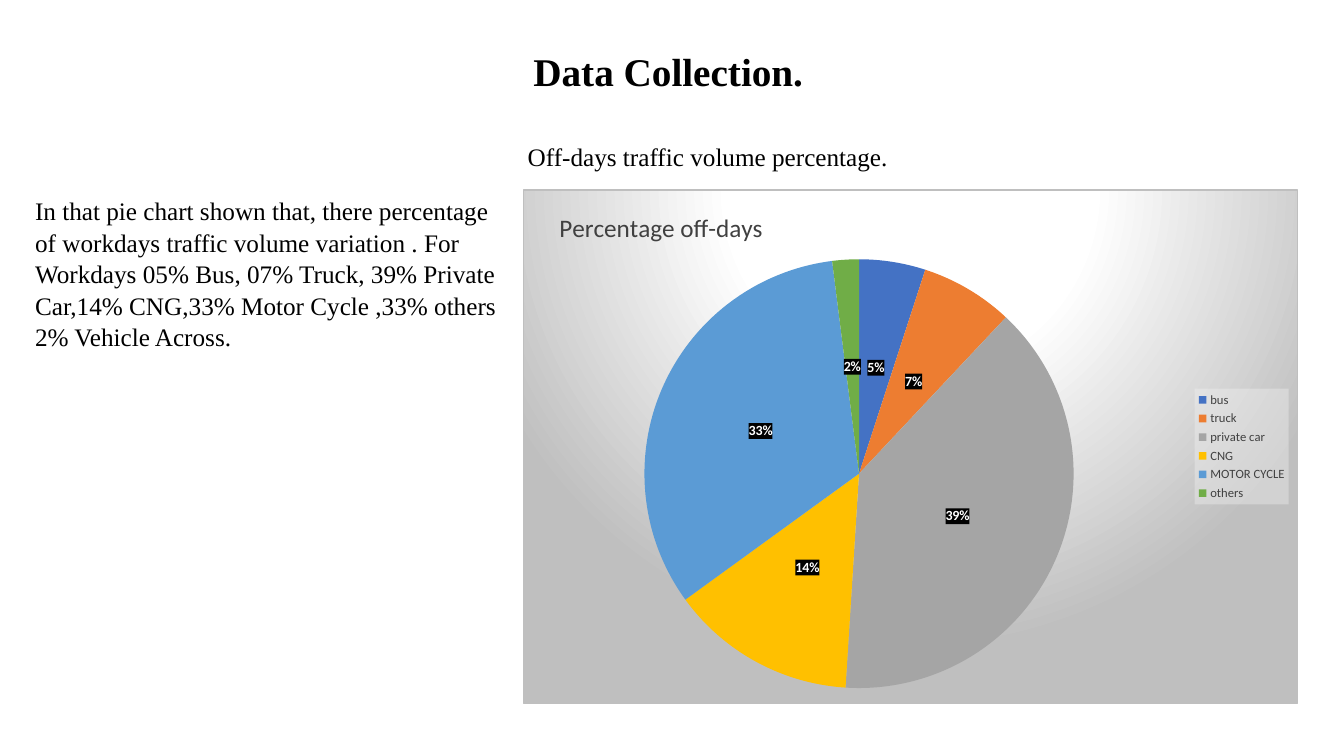
from lxml import etree
from pptx import Presentation
from pptx.chart.data import CategoryChartData
from pptx.dml.color import RGBColor
from pptx.enum.chart import XL_CHART_TYPE, XL_LABEL_POSITION, XL_LEGEND_POSITION
from pptx.enum.text import MSO_ANCHOR, MSO_AUTO_SIZE, PP_ALIGN
from pptx.oxml import parse_xml
from pptx.oxml.ns import nsdecls, qn
from pptx.util import Inches, Pt

HEADING = "Data Collection."
SUBHEADING = "Off-days traffic volume percentage."
DESCRIPTION = (
    "In that pie chart shown that, there percentage of workdays traffic volume variation . "
    "For Workdays 05% Bus, 07% Truck, 39% Private Car,14% CNG,33% Motor Cycle ,33% others "
    "2% Vehicle Across."
)
CHART_TITLE = "Percentage off-days"

BLACK = RGBColor(0x00, 0x00, 0x00)
WHITE = RGBColor(0xFF, 0xFF, 0xFF)
DARK_GRAY = RGBColor(0x40, 0x40, 0x40)
LIGHT_GRAY = RGBColor(0xF2, 0xF2, 0xF2)
SILVER = RGBColor(0xBF, 0xBF, 0xBF)

VEHICLES = [
    ("bus", 5, RGBColor(0x44, 0x72, 0xC4)),
    ("truck", 7, RGBColor(0xED, 0x7D, 0x31)),
    ("private car", 39, RGBColor(0xA5, 0xA5, 0xA5)),
    ("CNG", 14, RGBColor(0xFF, 0xC0, 0x00)),
    ("MOTOR CYCLE", 33, RGBColor(0x5B, 0x9B, 0xD5)),
    ("others", 2, RGBColor(0x70, 0xAD, 0x47)),
]
GRADIENT_STOPS = [(0, WHITE), (39, WHITE), (100, SILVER)]


def style_font(font, name, size, color, bold=False):
    font.name, font.size, font.bold = name, Pt(size), bold
    font.color.rgb = color


def write_text(shape, text, size, bold=False, align=PP_ALIGN.LEFT, spacing=1.0,
               anchor=MSO_ANCHOR.TOP, wrap=True):
    frame = shape.text_frame
    frame.word_wrap = wrap
    frame.auto_size = MSO_AUTO_SIZE.NONE
    frame.vertical_anchor = anchor
    paragraph = frame.paragraphs[0]
    paragraph.alignment = align
    paragraph.line_spacing = spacing
    run = paragraph.add_run()
    run.text = text
    style_font(run.font, "Times New Roman", size, BLACK, bold)


def set_layout(parent, index, target=None, **fractions):
    old = parent.find(qn("c:layout"))
    if old is not None:
        parent.remove(old)
    layout = etree.Element(qn("c:layout"))
    manual = etree.SubElement(layout, qn("c:manualLayout"))
    settings = [("layoutTarget", target)] if target else []
    settings += [("xMode", "edge"), ("yMode", "edge"), *fractions.items()]
    for tag, value in settings:
        etree.SubElement(manual, qn(f"c:{tag}")).set("val", str(value))
    parent.insert(index, layout)


def add_properties(parent, content):
    properties = parse_xml(f'<c:spPr {nsdecls("c", "a")}>{content}</c:spPr>')
    parent.find(qn("c:txPr")).addprevious(properties)


def solid(color, alpha=100):
    return (f'<a:solidFill><a:srgbClr val="{color}"><a:alpha val="{alpha * 1000}"/>'
            "</a:srgbClr></a:solidFill>")


def add_pie(slide):
    data = CategoryChartData()
    data.categories = [name for name, _, _ in VEHICLES]
    data.add_series("Series 1", [value for _, value, _ in VEHICLES])
    chart = slide.shapes.add_chart(
        XL_CHART_TYPE.PIE, Inches(5.19), Inches(1.88), Inches(7.68), Inches(5.1), data
    ).chart
    style_font(chart.font, "Calibri", 10, BLACK)

    chart.has_title = True
    title_run = chart.chart_title.text_frame.paragraphs[0].add_run()
    title_run.text = CHART_TITLE
    style_font(title_run.font, "Calibri", 18, DARK_GRAY)
    set_layout(chart.chart_title._element, 1, x=0.04, y=0.03)
    plot_area = chart._chartSpace.chart.plotArea
    set_layout(plot_area, 0, "inner", x=0.156, y=0.135, w=0.555, h=0.836)

    plot = chart.plots[0]
    plot.vary_by_categories = True
    for index, (_, _, color) in enumerate(VEHICLES):
        fill = plot.series[0].points[index].format.fill
        fill.solid()
        fill.fore_color.rgb = color

    plot.has_data_labels = True
    labels = plot.data_labels
    labels.show_value = False
    labels.show_percentage = True
    labels.number_format = "0%"
    labels.number_format_is_linked = False
    labels.position = XL_LABEL_POSITION.CENTER
    style_font(labels.font, "Calibri", 10, WHITE, True)
    add_properties(labels._element, solid(BLACK, 75))

    chart.has_legend = True
    legend = chart.legend
    legend.position = XL_LEGEND_POSITION.RIGHT
    legend.include_in_layout = False
    style_font(legend.font, "Calibri", 9, DARK_GRAY)
    add_properties(legend._element, solid(LIGHT_GRAY, 39))

    stops = "".join(
        f'<a:gs pos="{position * 1000}"><a:srgbClr val="{color}"/></a:gs>'
        for position, color in GRADIENT_STOPS
    )
    add_properties(
        chart._chartSpace,
        f'<a:gradFill><a:gsLst>{stops}</a:gsLst><a:path path="circle">'
        '<a:fillToRect l="50000" t="-80000" r="50000" b="180000"/></a:path></a:gradFill>'
        f'<a:ln w="{Pt(0.75)}">{solid(SILVER)}</a:ln>',
    )


def main():
    presentation = Presentation()
    presentation.slide_width = Inches(13.33)
    presentation.slide_height = Inches(7.5)
    slide = presentation.slides.add_slide(presentation.slide_layouts[5])

    title = slide.shapes.title
    title.left, title.top = Inches(5.19), Inches(0.42)
    title.width, title.height = Inches(2.91), Inches(0.57)
    write_text(title, HEADING, 28, bold=True, wrap=False)

    subheading = slide.shapes.add_textbox(
        Inches(2.02), Inches(1.11), Inches(10), Inches(0.65))
    write_text(subheading, SUBHEADING, 18, align=PP_ALIGN.CENTER, spacing=0.9,
               anchor=MSO_ANCHOR.BOTTOM)

    add_pie(slide)

    description = slide.shapes.add_textbox(
        Inches(0.25), Inches(1.88), Inches(4.94), Inches(1.62))
    write_text(description, DESCRIPTION, 18, spacing=1.04)

    presentation.save("out.pptx")


if __name__ == "__main__":
    main()
